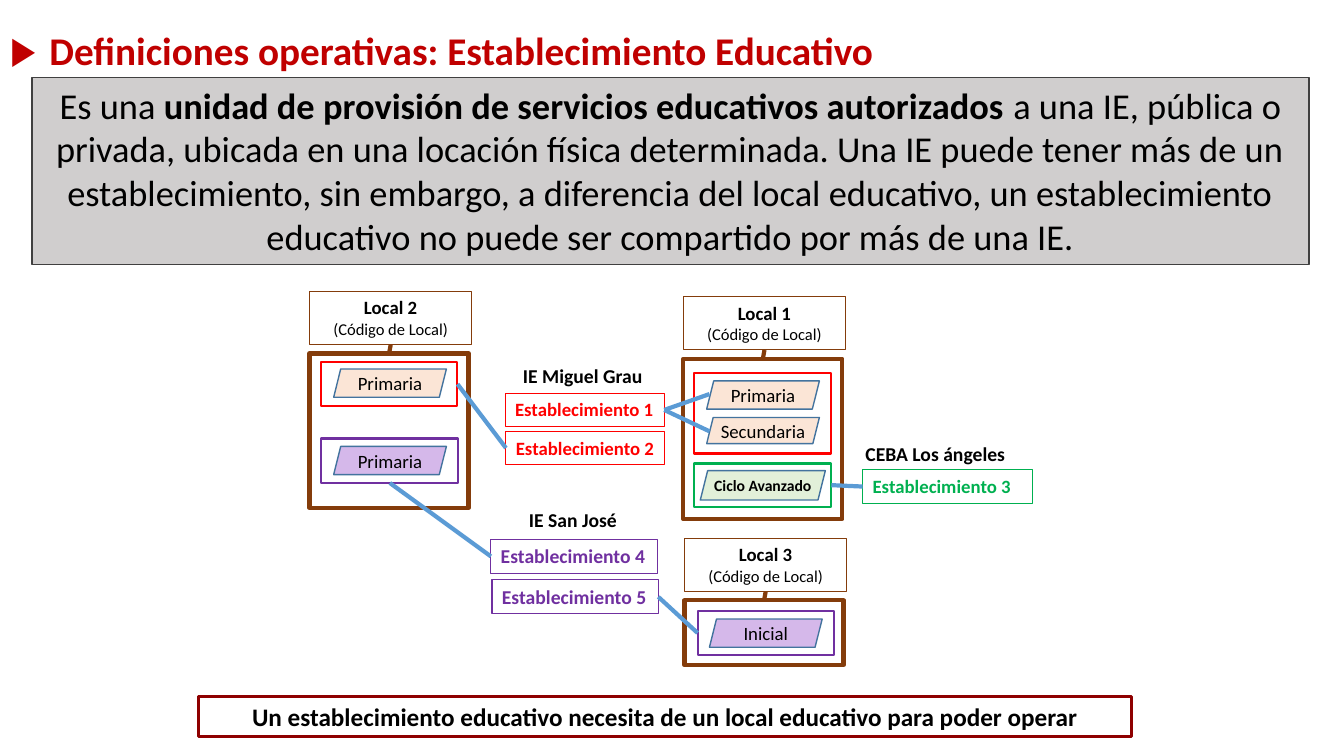
from dataclasses import dataclass

from lxml.etree import SubElement
from pptx import Presentation
from pptx.dml.color import RGBColor
from pptx.enum.shapes import MSO_CONNECTOR, MSO_SHAPE
from pptx.enum.text import MSO_ANCHOR, MSO_AUTO_SIZE, PP_ALIGN
from pptx.oxml.ns import qn
from pptx.util import Cm, Pt


@dataclass(frozen=True)
class Theme:
    font: str = "Calibri"
    black: str = "000000"
    title: str = "C00000"
    gray: str = "D0CECE"
    edge: str = "404040"
    wine: str = "8E0000"
    brown: str = "843C0B"
    red: str = "FF0000"
    green: str = "00B050"
    purple: str = "7030A0"
    blue: str = "5B9BD5"
    steel: str = "43739E"
    peach: str = "FBE5D6"
    mint: str = "E2F0D9"
    lilac: str = "D5B8EA"
    head: float = 28
    lead: float = 26
    close: float = 18
    name: float = 14
    label: float = 13.4
    code: float = 11.8
    small: float = 11.2


@dataclass(frozen=True)
class Box:
    x: float
    y: float
    w: float
    h: float


@dataclass(frozen=True)
class Place:
    name: str
    x: float
    y: float
    h: float


@dataclass(frozen=True)
class Level:
    text: str
    box: Box
    fill: str
    size: float = 13.4
    bold: bool = False


@dataclass(frozen=True)
class Unit:
    num: int
    box: Box
    color: str
    size: float


@dataclass(frozen=True)
class Link:
    num: int
    side: int
    ring: str
    end: int


T = Theme()
LEFT, MID = PP_ALIGN.LEFT, PP_ALIGN.CENTER

LEAD = [
    ("Es una ", False),
    ("unidad de provisión de servicios educativos autorizados ", True),
    ("a una IE, pública o privada, ubicada en una locación física determinada. "
     "Una IE puede tener más de un establecimiento, sin embargo, a diferencia "
     "del local educativo, un establecimiento educativo no puede ser compartido "
     "por más de una IE.", False),
]
PLACES = [
    Place("Local 1", 17.22, 7.47, 4.04),
    Place("Local 2", 7.8, 7.34, 3.89),
    Place("Local 3", 17.25, 13.56, 1.63),
]
RINGS = {
    "grau 1": (Box(17.5, 9.4, 3.45, 2.03), T.red),
    "grau 2": (Box(8.08, 9.12, 3.45, 1.12), T.red),
    "ceba": (Box(17.5, 11.68, 3.45, 1.09), T.green),
    "josé 4": (Box(8.1, 11.05, 3.45, 1.12), T.purple),
    "josé 5": (Box(17.58, 15.39, 3.45, 1.12), T.purple),
}
LEVELS = [
    Level("Primaria", Box(17.81, 9.6, 2.84, 0.71), T.peach),
    Level("Secundaria", Box(17.81, 10.52, 2.84, 0.66), T.peach),
    Level("Ciclo Avanzado", Box(17.65, 11.86, 3.15, 0.74), T.mint, T.small, True),
    Level("Primaria", Box(8.41, 9.3, 2.84, 0.71), T.peach),
    Level("Primaria", Box(8.41, 11.25, 2.84, 0.71), T.lilac),
    Level("Inicial", Box(17.88, 15.6, 2.84, 0.71), T.lilac),
]
UNITS = [
    Unit(1, Box(12.73, 9.91, 4.01, 0.84), T.red, T.label),
    Unit(2, Box(12.75, 10.87, 4.01, 0.84), T.red, T.label),
    Unit(3, Box(21.74, 11.84, 4.29, 0.84), T.green, T.label),
    Unit(4, Box(12.37, 13.59, 4.19, 0.86), T.purple, T.name),
    Unit(5, Box(12.4, 14.61, 4.19, 0.86), T.purple, T.name),
]
NAMES = [
    ("IE Miguel Grau", Box(12.93, 9.04, 3.56, 0.86)),
    ("CEBA Los ángeles", Box(21.56, 11.02, 4.06, 0.86)),
    ("IE San José", Box(13.08, 12.67, 2.74, 0.86)),
]
LINKS = [
    Link(2, 1, "grau 2", 3),
    Link(3, 1, "ceba", 3),
    Link(4, 1, "josé 4", 2),
    Link(5, 3, "josé 5", 1),
]
TIPS = [(17.88, 9.93), (17.88, 10.87)]


def span(box: Box) -> tuple:
    return Cm(box.x), Cm(box.y), Cm(box.w), Cm(box.h)


def style(para, size: float, color: str = T.black, bold: bool = False,
          align=MID) -> None:
    para.alignment = align
    font = para.font
    font.name, font.size, font.bold = T.font, Pt(size), bold
    font.color.rgb = RGBColor.from_string(color)


def draw(page, box: Box, line: str, width: float, fill: str = "",
         kind=MSO_SHAPE.RECTANGLE):
    shape = page.shapes.add_shape(kind, *span(box))
    shape.shadow.inherit = False
    shape.line.color.rgb = RGBColor.from_string(line)
    shape.line.width = Pt(width)
    if fill:
        shape.fill.solid()
        shape.fill.fore_color.rgb = RGBColor.from_string(fill)
    else:
        shape.fill.background()
    shape.text_frame.vertical_anchor = MSO_ANCHOR.TOP
    return shape


def join(page, color: str, start, side: int, end=None, stop: int = 0,
         tip: tuple = (0, 0)) -> None:
    line = page.shapes.add_connector(
        MSO_CONNECTOR.STRAIGHT, 0, 0, Cm(tip[0]), Cm(tip[1]))
    line.begin_connect(start, side)
    if end is not None:
        line.end_connect(end, stop)
    line.line.color.rgb = RGBColor.from_string(color)
    line.line.width = Pt(3)
    SubElement(line._element.spPr, qn("a:effectLst"))


def title(page) -> None:
    head = page.shapes.title
    head.left, head.top, head.width, head.height = span(Box(0, 0.66, 33, 1.35))
    frame = head.text_frame
    frame.text = "Definiciones operativas: Establecimiento Educativo"
    frame.auto_size = MSO_AUTO_SIZE.NONE
    frame.vertical_anchor = MSO_ANCHOR.MIDDLE
    para = frame.paragraphs[0]
    props = para._p.get_or_add_pPr()
    props.set("marL", str(Cm(0.99)))
    props.set("indent", str(-Cm(0.99)))
    SubElement(props, qn("a:buFont"), typeface=T.font)
    SubElement(props, qn("a:buChar"), char="▶")
    para.line_spacing = 0.9
    style(para, T.head, T.title, True, LEFT)


def place(page, spot: Place) -> None:
    frame = draw(page, Box(spot.x, spot.y + 1.57, 4.01, spot.h), T.brown, 3)
    tag = draw(page, Box(spot.x, spot.y, 4.09, 1.35), T.brown, 0.75)
    tag.text_frame.text = f"{spot.name}\n(Código de Local)"
    name, code = tag.text_frame.paragraphs
    style(name, T.label, bold=True)
    style(code, T.code)
    join(page, T.brown, frame, 0, tag, 2)


def level(page, item: Level) -> None:
    shape = draw(page, item.box, T.steel, 1, item.fill, MSO_SHAPE.PARALLELOGRAM)
    frame = shape.text_frame
    frame.text = item.text
    frame.word_wrap = False
    frame.vertical_anchor = MSO_ANCHOR.MIDDLE
    frame.margin_left = frame.margin_right = 0
    frame.margin_top = frame.margin_bottom = 0
    style(frame.paragraphs[0], item.size, bold=item.bold)


def unit(page, item: Unit):
    shape = draw(page, item.box, item.color, 0.75)
    shape.text_frame.text = f"Establecimiento {item.num}"
    shape.text_frame.word_wrap = False
    style(shape.text_frame.paragraphs[0], item.size, item.color, True, LEFT)
    return shape


def main() -> None:
    deck = Presentation()
    deck.slide_width, deck.slide_height = Cm(33.87), Cm(19.05)
    page = deck.slides.add_slide(deck.slide_layouts[5])

    # Title and definition
    title(page)
    lead = draw(page, Box(0.81, 1.96, 32.18, 4.7), T.edge, 1, T.gray)
    para = lead.text_frame.paragraphs[0]
    for text, bold in LEAD:
        run = para.add_run()
        run.text, run.font.bold = text, bold
    style(para, T.lead)

    # Premises, their rings and levels
    for spot in PLACES:
        place(page, spot)
    rings = {key: draw(page, box, color, 1.5)
             for key, (box, color) in RINGS.items()}
    for item in LEVELS:
        level(page, item)

    # Institutions and their units
    for text, box in NAMES:
        frame = page.shapes.add_textbox(*span(box)).text_frame
        frame.text = text
        style(frame.paragraphs[0], T.name, bold=True, align=LEFT)
    units = {item.num: unit(page, item) for item in UNITS}

    # Links from units to premises
    for tip in TIPS:
        join(page, T.blue, units[1], 3, tip=tip)
    for link in LINKS:
        join(page, T.blue, units[link.num], link.side, rings[link.ring], link.end)

    # Closing line
    close = draw(page, Box(5, 17.55, 23.52, 1.02), T.wine, 2.25)
    close.text_frame.text = ("Un establecimiento educativo necesita de un local "
                             "educativo para poder operar")
    style(close.text_frame.paragraphs[0], T.close, bold=True)

    deck.save("out.pptx")


if __name__ == "__main__":
    main()
